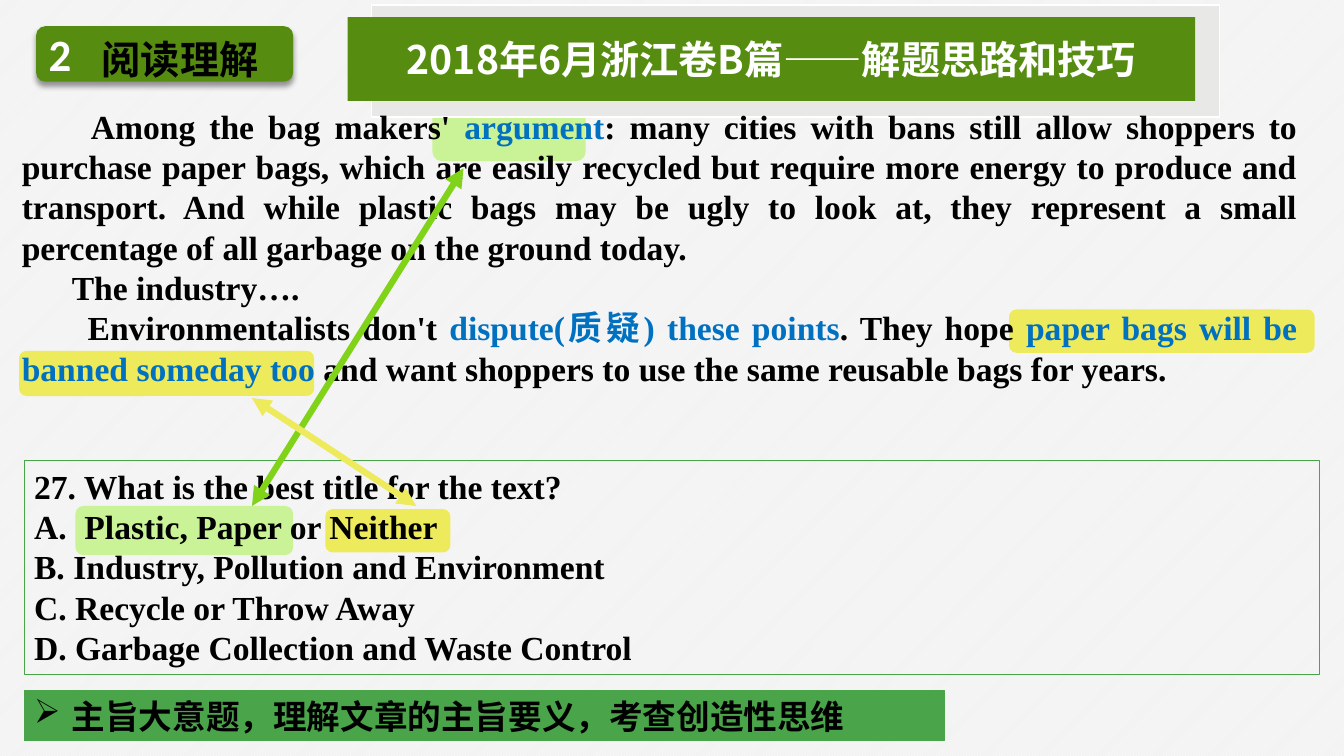
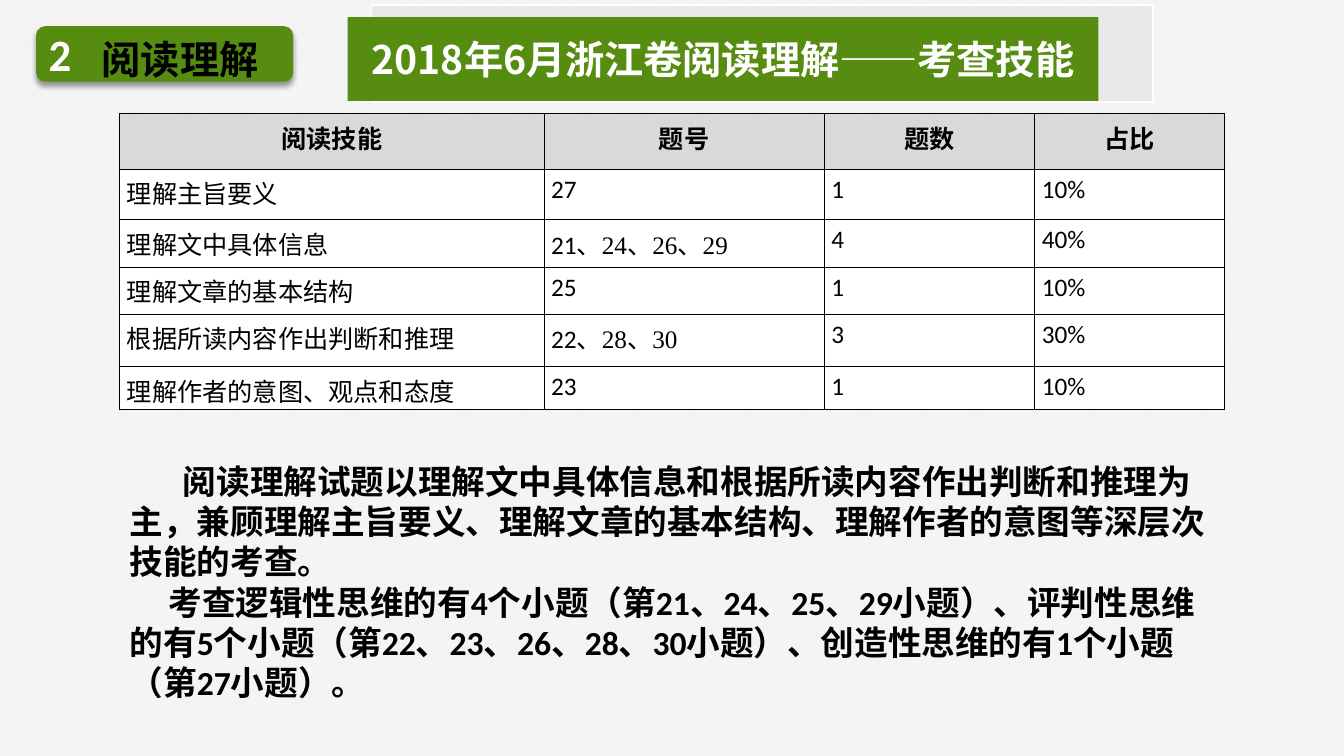
import lxml.etree
import pptx
import pptx.dml.color
import pptx.enum.dml
import pptx.enum.shapes
import pptx.enum.text
import pptx.oxml.ns
import pptx.util

Cm = pptx.util.Cm
Pt = pptx.util.Pt
qn = pptx.oxml.ns.qn
ALIGN = pptx.enum.text.PP_ALIGN
ANCHOR = pptx.enum.text.MSO_ANCHOR
AUTO_SIZE = pptx.enum.text.MSO_AUTO_SIZE
SHAPE = pptx.enum.shapes.MSO_SHAPE


class Theme:
    black = "000000"
    white = "FFFFFF"
    paper = "F2F2F2"
    title_green = "568D11"
    title_backing = "E8E8E6"
    frame_green = "4AA44A"
    light_green = "CAF297"
    arrow_green = "81D31A"
    yellow = "EDEA5C"
    blue = "0070C0"
    table_head = "D9D9D9"
    sans = "Calibri"
    serif = "Times New Roman"
    chinese = "Noto Sans CJK SC"
    number_size = 32
    title_size = 28
    body_size = 24
    table_size = 18


def rgb(colour):
    return pptx.dml.color.RGBColor.from_string(colour)


def write_text(frame, paragraphs, size, font, colour=Theme.black, bold=True, align=ALIGN.LEFT):
    """Fill a text frame; text between | marks is blue."""
    frame.text = "\n".join(paragraphs)
    for paragraph, text in zip(frame.paragraphs, paragraphs):
        paragraph.alignment = align
        pieces = text.split("|")
        paragraph.text = pieces[0]
        for piece in pieces[1:]:
            paragraph.add_run().text = piece
        for index, run in enumerate(paragraph.runs):
            run.font.size = Pt(size)
            run.font.bold = bold
            run.font.name = font
            run.font.color.rgb = rgb(Theme.blue if index % 2 else colour)
            east_asian = lxml.etree.Element(qn("a:ea"), typeface=Theme.chinese)
            run._r.get_or_add_rPr().find(qn("a:latin")).addnext(east_asian)


presentation = pptx.Presentation()
presentation.slide_width = Cm(33.87)
presentation.slide_height = Cm(19.05)

background = presentation.slide_master.background.fill
background.patterned()
background.pattern = pptx.enum.dml.MSO_PATTERN.LIGHT_UPWARD_DIAGONAL
background.fore_color.rgb = rgb(Theme.white)
background.back_color.rgb = rgb(Theme.paper)

title_only = presentation.slide_layouts.get_by_name("Title Only")
passage_slide = presentation.slides.add_slide(title_only)
skills_slide = presentation.slides.add_slide(title_only)

# Highlights lie behind the passage, the question and the title band
highlights = [
    (8.2, 12.83, 3.15, 1.09, Theme.yellow),
    (1.9, 12.75, 5.49, 1.24, Theme.light_green),
    (25.43, 7.8, 7.7, 1.09, Theme.yellow),
    (0.48, 8.84, 7.44, 1.14, Theme.yellow),
    (10.9, 2.69, 3.86, 1.37, Theme.light_green),
]
for left, top, width, height, colour in highlights:
    highlight = passage_slide.shapes.add_shape(
        SHAPE.ROUNDED_RECTANGLE, Cm(left), Cm(top), Cm(width), Cm(height))
    highlight.shadow.inherit = False
    highlight.fill.solid()
    highlight.fill.fore_color.rgb = rgb(colour)
    highlight.line.fill.background()

# Section badge and title band
headers = [
    (passage_slide, "2018年6月浙江卷B篇——解题思路和技巧", 21.36, 21.36, 2.82),
    (skills_slide, "2018年6月浙江卷阅读理解——考查技能", 18.92, 19.69, 2.44),
]
for slide, title_text, title_width, backing_width, backing_height in headers:
    badge = slide.shapes.add_shape(
        SHAPE.ROUNDED_RECTANGLE, Cm(0.91), Cm(0.66), Cm(6.48), Cm(1.4))
    badge.fill.solid()
    badge.fill.fore_color.rgb = rgb(Theme.title_green)
    badge.line.fill.background()
    badge.shadow.inherit = False
    effects = badge.element.spPr.find(qn("a:effectLst"))
    shadow = lxml.etree.SubElement(
        effects, qn("a:outerShdw"), blurRad=str(Pt(4)), dist=str(Pt(3)),
        dir="5400000", algn="t", rotWithShape="0")
    shadow_colour = lxml.etree.SubElement(shadow, qn("a:srgbClr"), val=Theme.black)
    lxml.etree.SubElement(shadow_colour, qn("a:alpha"), val="40000")
    badge.text_frame.vertical_anchor = ANCHOR.MIDDLE
    write_text(badge.text_frame, ["2"], Theme.number_size, Theme.sans, Theme.white)

    section = slide.shapes.add_textbox(Cm(2.29), Cm(0.76), Cm(4.5), Cm(1.45))
    section.text_frame.word_wrap = False
    write_text(section.text_frame, ["阅读理解"], Theme.title_size, Theme.chinese,
               align=ALIGN.CENTER)

    backing = slide.shapes.add_shape(
        SHAPE.RECTANGLE, Cm(9.37), Cm(0.13), Cm(backing_width), Cm(backing_height))
    backing.shadow.inherit = False
    backing.fill.solid()
    backing.fill.fore_color.rgb = rgb(Theme.title_backing)
    backing.line.color.rgb = rgb(Theme.white)
    backing.line.width = Pt(1)

    title = slide.shapes.title
    backing.element.addnext(title.element)
    title.left, title.top = Cm(8.76), Cm(0.43)
    title.width, title.height = Cm(title_width), Cm(2.11)
    title.fill.solid()
    title.fill.fore_color.rgb = rgb(Theme.title_green)
    frame = title.text_frame
    frame.auto_size = AUTO_SIZE.NONE
    frame.vertical_anchor = ANCHOR.MIDDLE
    frame.margin_left = frame.margin_right = Cm(0.2)
    frame.margin_top = frame.margin_bottom = Cm(0.1)
    write_text(frame, [title_text], Theme.title_size, Theme.chinese, Theme.white,
               align=ALIGN.CENTER)

# Running text, with the first-line indent of each paragraph
passage = [
    (1.74, "Among the bag makers' |argument|: many cities with bans still allow shoppers to "
           "purchase paper bags, which are easily recycled but require more energy to produce "
           "and transport. And while plastic bags may be ugly to look at, they represent a "
           "small percentage of all garbage on the ground today."),
    (1.26, "The industry…."),
    (1.66, "Environmentalists don't |dispute(质疑) these points|. They hope |paper bags will be "
           "banned someday too |and want shoppers to use the same reusable bags for years."),
]
summary = [
    (1.34, "阅读理解试题以理解文中具体信息和根据所读内容作出判断和推理为主，兼顾理解主旨要义、"
           "理解文章的基本结构、理解作者的意图等深层次技能的考查。"),
    (0.98, "考查逻辑性思维的有4个小题（第21、24、25、29小题）、评判性思维的有5个小题"
           "（第22、23、26、28、30小题）、创造性思维的有1个小题（第27小题）。"),
]
running_texts = [
    (passage_slide, (0.3, 2.54, 32.64, 7.44), passage, Theme.serif, ALIGN.JUSTIFY),
    (skills_slide, (3.02, 11.48, 27.81, 6.4), summary, Theme.sans, ALIGN.LEFT),
]
for slide, position, content, font, align in running_texts:
    text_box = slide.shapes.add_textbox(*map(Cm, position))
    frame = text_box.text_frame
    frame.word_wrap = True
    write_text(frame, [text for _, text in content], Theme.body_size, font, align=align)
    for paragraph, (indent, _) in zip(frame.paragraphs, content):
        paragraph._p.get_or_add_pPr().set("indent", str(Cm(indent)))

# Question and the skill it tests
question = [
    "27. What is the best title for the text?",
    "Plastic, Paper or Neither",
    "B. Industry, Pollution and Environment",
    "C. Recycle or Throw Away",
    "D. Garbage Collection and Waste Control",
]
skill = ["主旨大意题，理解文章的主旨要义，考查创造性思维"]
framed_boxes = [
    ((0.61, 11.61, 32.64, 5.38), question, Theme.serif, ALIGN.JUSTIFY, None,
     1, 1.27, "a:buAutoNum", {"type": "alphaUcPeriod"}),
    ((0.61, 17.4, 23.19, 1.27), skill, Theme.sans, ALIGN.LEFT, Theme.frame_green,
     0, 0.95, "a:buChar", {"char": "➢"}),
]
for (position, paragraphs, font, align, fill_colour,
     bullet_index, hanging, bullet_tag, bullet_attributes) in framed_boxes:
    box = passage_slide.shapes.add_shape(SHAPE.RECTANGLE, *map(Cm, position))
    box.shadow.inherit = False
    if fill_colour:
        box.fill.solid()
        box.fill.fore_color.rgb = rgb(fill_colour)
    else:
        box.fill.background()
    box.line.color.rgb = rgb(Theme.frame_green)
    box.line.width = Pt(0.75)
    box.text_frame.vertical_anchor = ANCHOR.TOP
    write_text(box.text_frame, paragraphs, Theme.body_size, font, align=align)
    properties = box.text_frame.paragraphs[bullet_index]._p.get_or_add_pPr()
    properties.set("marL", str(Cm(hanging)))
    properties.set("indent", str(-Cm(hanging)))
    lxml.etree.SubElement(properties, qn(bullet_tag), bullet_attributes)

# Arrows from the passage to the matching words of the answer
arrows = [
    (11.68, 4.24, 6.35, 12.75, Theme.arrow_green),
    (6.35, 10.03, 10.49, 12.75, Theme.yellow),
]
for start_x, start_y, end_x, end_y, colour in arrows:
    arrow = passage_slide.shapes.add_connector(
        pptx.enum.shapes.MSO_CONNECTOR.STRAIGHT,
        Cm(start_x), Cm(start_y), Cm(end_x), Cm(end_y))
    arrow.line.color.rgb = rgb(colour)
    arrow.line.width = Pt(4.5)
    arrow_properties = arrow.element.spPr
    for end in ("a:headEnd", "a:tailEnd"):
        lxml.etree.SubElement(arrow_properties.find(qn("a:ln")), qn(end), type="triangle")
    lxml.etree.SubElement(arrow_properties, qn("a:effectLst"))

# Table of reading skills
skill_rows = [
    ("阅读技能", "题号", "题数", "占比"),
    ("理解主旨要义", "27", "1", "10%"),
    ("理解文中具体信息", "21、24、26、29", "4", "40%"),
    ("理解文章的基本结构", "25", "1", "10%"),
    ("根据所读内容作出判断和推理", "22、28、30", "3", "30%"),
    ("理解作者的意图、观点和态度", "23", "1", "10%"),
]
column_widths = [10.69, 7.06, 5.31, 4.78]
row_heights = [1.4, 1.27, 1.19, 1.19, 1.32, 1.09]
table = skills_slide.shapes.add_table(
    len(skill_rows), len(column_widths), Cm(3.02), Cm(2.87),
    Cm(sum(column_widths)), Cm(sum(row_heights))).table
for column, width in zip(table.columns, column_widths):
    column.width = Cm(width)
for row_index, (row, height, values) in enumerate(zip(table.rows, row_heights, skill_rows)):
    row.height = Cm(height)
    is_head = row_index == 0
    for column_index, (cell, value) in enumerate(zip(row.cells, values)):
        cell.margin_left = cell.margin_right = Cm(0.18)
        cell.margin_top = cell.margin_bottom = Cm(0.13)
        for side in ("a:lnL", "a:lnR", "a:lnT", "a:lnB"):
            border = lxml.etree.SubElement(
                cell._tc.get_or_add_tcPr(), qn(side), w=str(Pt(0.75)))
            border_fill = lxml.etree.SubElement(border, qn("a:solidFill"))
            lxml.etree.SubElement(border_fill, qn("a:srgbClr"), val=Theme.black)
        cell.fill.solid()
        cell.fill.fore_color.rgb = rgb(Theme.table_head if is_head else Theme.white)
        is_number_list = column_index == 1 and "、" in value
        text = value.replace("、", "|、", 1) if is_number_list else value
        write_text(cell.text_frame, [text], Theme.table_size, Theme.sans, bold=is_head,
                   align=ALIGN.CENTER if is_head else ALIGN.LEFT)
        for later_numbers in cell.text_frame.paragraphs[0].runs[1:]:
            later_numbers.font.name = Theme.serif
            later_numbers.font.color.rgb = rgb(Theme.black)

presentation.save("out.pptx")
